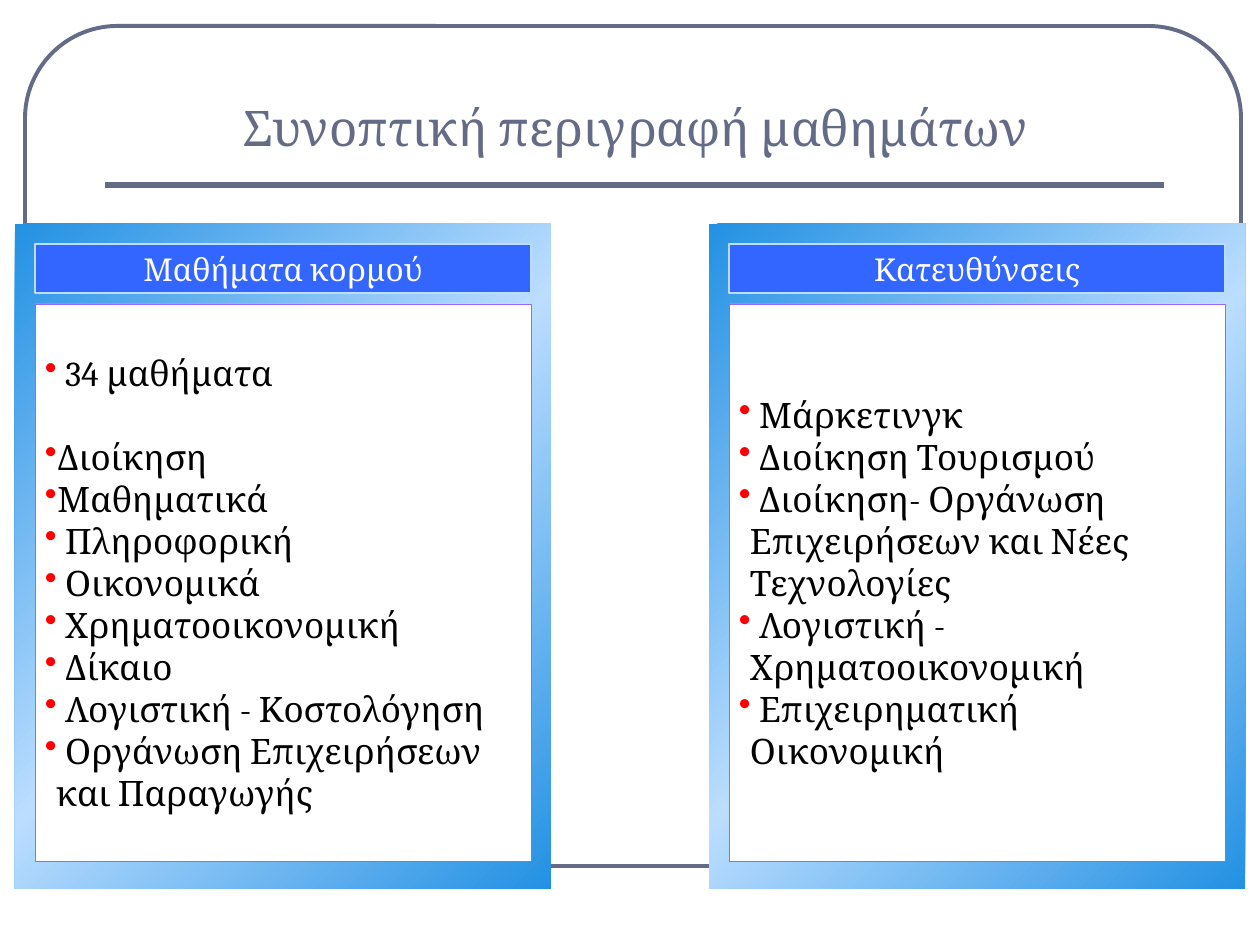
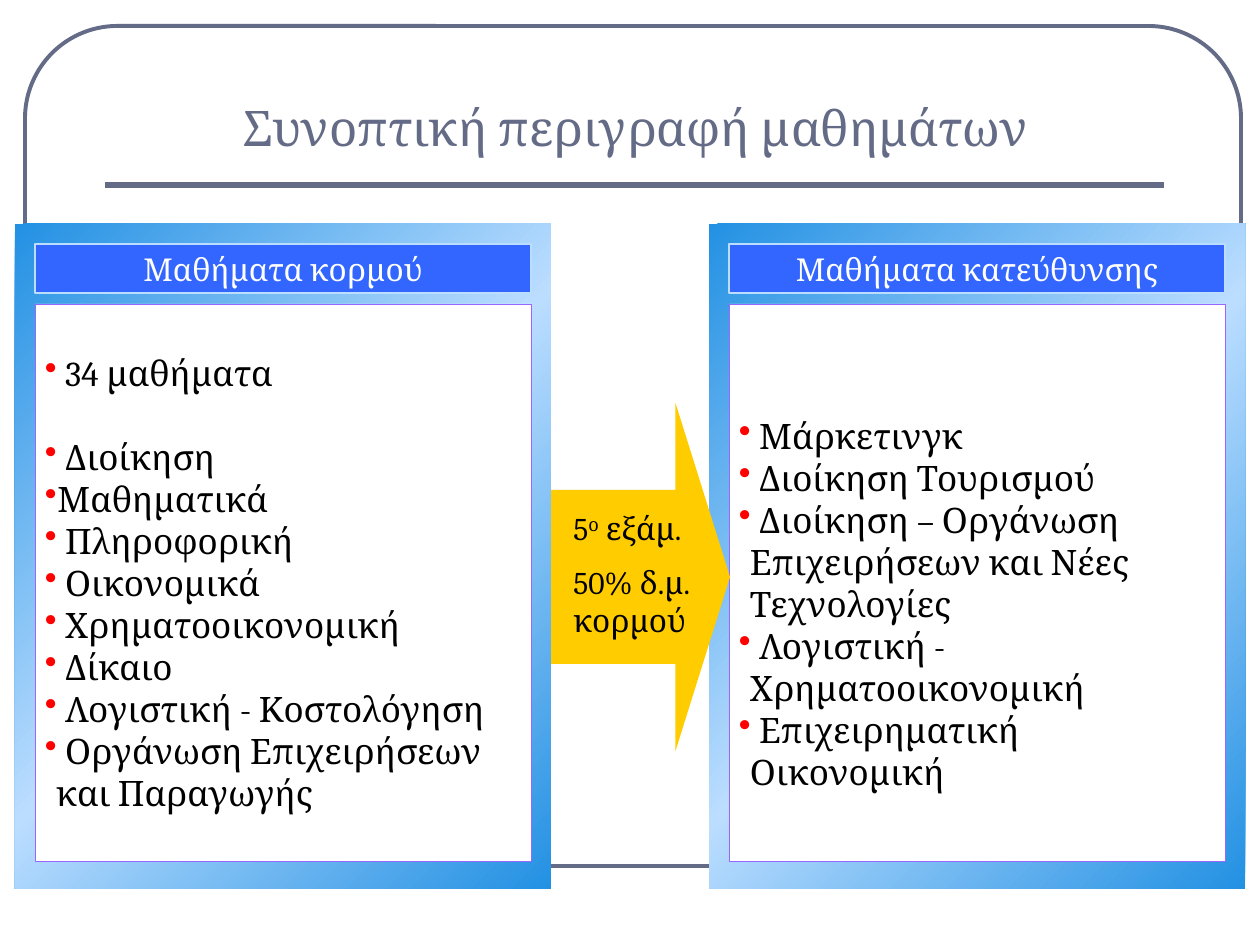
from copy import deepcopy

from pptx import Presentation
from pptx.dml.color import RGBColor
from pptx.enum.shapes import MSO_CONNECTOR as CONN, MSO_SHAPE as SHAPE
from pptx.enum.text import MSO_ANCHOR as ANCHOR, PP_ALIGN as ALIGN
from pptx.oxml.ns import qn
from pptx.util import Emu, Pt
from lxml.etree import SubElement

COLORS = {
    "slate": "646B86", "edge": "2391E3", "pale": "BBDDFF", "header": "3366FF",
    "violet": "9966FF", "bullet": "FF0000", "arrow": "FFCC00",
    "white": "FFFFFF", "black": "000000",
}
FONT = "Cambria"
TITLE = "Συνοπτική περιγραφή μαθημάτων"
LEFT_X, RIGHT_X = 15, 709
LINE = 42
CORE_SUBJECTS = [
    "Μαθηματικά", " Πληροφορική", " Οικονομικά", " Χρηματοοικονομική", " Δίκαιο",
    " Λογιστική - Κοστολόγηση", " Οργάνωση Επιχειρήσεων και Παραγωγής",
]


def px(n):
    return Emu(round(n * 914400 / 126))


def rgb(name):
    return RGBColor.from_string(COLORS[name])


class Deck:
    """Holds the shared style and the current slide, and draws its elements."""

    def __init__(self):
        self.prs = Presentation()
        self.prs.slide_width, self.prs.slide_height = px(1260), px(945)

    def new_slide(self):
        self.slide = self.prs.slides.add_slide(self.prs.slide_layouts[6])
        self.shape(SHAPE.ROUNDED_RECTANGLE, 25, 26, 1216, 840,
                   line="slate", width=2.25, adj=[0.11])
        self.rule(105, 1164, 185)

    def shape(self, kind, x, y, w, h, fill=None, line=None, width=0.75, adj=()):
        s = self.slide.shapes.add_shape(kind, px(x), px(y), px(w), px(h))
        s.shadow.inherit = False
        for i, value in enumerate(adj):
            s.adjustments[i] = value
        if fill:
            s.fill.solid()
            s.fill.fore_color.rgb = rgb(fill)
        else:
            s.fill.background()
        if line:
            s.line.color.rgb = rgb(line)
            s.line.width = Pt(width)
        else:
            s.line.fill.background()
        return s

    def rule(self, x1, x2, y):
        c = self.slide.shapes.add_connector(CONN.STRAIGHT, px(x1), px(y), px(x2), px(y))
        c.line.color.rgb = rgb("slate")
        c.line.width = Pt(3)
        SubElement(c._element.spPr, qn("a:effectLst"))

    def text_box(self, x, y, w, h):
        tf = self.slide.shapes.add_textbox(px(x), px(y), px(w), px(h)).text_frame
        tf.word_wrap = True
        return tf

    def set_text(self, tf, lines, size, color, align=ALIGN.LEFT):
        tf.text = "\n".join(lines)
        for p in tf.paragraphs:
            p.alignment = align
            for r in p.runs:
                self.style(r, size, color)

    def style(self, r, size, color):
        r.font.name = FONT
        r.font.size = Pt(size)
        r.font.color.rgb = rgb(color)

    def title(self, text):
        tf = self.text_box(105, 45, 1061, 118)
        tf.vertical_anchor = ANCHOR.BOTTOM
        self.set_text(tf, [text], 28, "slate", ALIGN.CENTER)

    def gradient(self, s, names):
        s.fill.gradient()
        s.fill.gradient_angle = 315
        stops = s._element.spPr.find(".//" + qn("a:gsLst"))
        stops.append(deepcopy(stops[0]))
        for i, (stop, name) in enumerate(zip(s.fill.gradient_stops, names)):
            stop.color.rgb = rgb(name)
            stop.position = i / (len(names) - 1)

    def bullet(self, p):
        pPr = p._p.get_or_add_pPr()
        pPr.set("marL", str(px(13)))
        pPr.set("indent", str(px(-11)))
        clr = SubElement(pPr, qn("a:buClr"))
        SubElement(clr, qn("a:srgbClr")).set("val", COLORS["bullet"])
        SubElement(pPr, qn("a:buChar")).set("char", "•")

    def panel(self, x, header, items, lead=0, gap_after_first=0):
        frame = self.shape(SHAPE.ACTION_BUTTON_CUSTOM, x, 224, 536, 665)
        self.gradient(frame, ["edge", "pale", "edge"])
        card = self.shape(SHAPE.RECTANGLE, x + 20, 304, 496, 557, "white", "violet", 0.25)
        head = self.shape(SHAPE.RECTANGLE, x + 20, 244, 496, 49, "header", "pale")
        for s in (card, head):
            tf = s.text_frame
            tf.vertical_anchor = ANCHOR.MIDDLE
            tf.margin_left = tf.margin_right = px(8)
            tf.margin_top = tf.margin_bottom = px(6)
        tf.word_wrap = False
        self.set_text(tf, [header], 18, "white", ALIGN.CENTER)
        tf = card.text_frame
        tf.word_wrap = True
        tf.margin_top = px(6 + lead)
        self.set_text(tf, items, 20, "black")
        tf.paragraphs[0].space_after = px(gap_after_first)
        for p in tf.paragraphs:
            self.bullet(p)

    def core_panel(self, management):
        self.panel(LEFT_X, "Μαθήματα κορμού",
                   [" 34 μαθήματα", management, *CORE_SUBJECTS], gap_after_first=LINE)

    def track_panel(self, header, organisation, lead=0):
        self.panel(RIGHT_X, header, [
            " Μάρκετινγκ", " Διοίκηση Τουρισμού",
            f" {organisation} Επιχειρήσεων και Νέες Τεχνολογίες",
            " Λογιστική - Χρηματοοικονομική", " Επιχειρηματική Οικονομική",
        ], lead)

    def arrow(self):
        self.shape(SHAPE.RIGHT_ARROW, 512, 403, 218, 348, "arrow", adj=[0.5, 0.25])

    def arrow_note(self):
        tf = self.text_box(561, 503, 169, 145)
        self.set_text(tf, ["5", "50% δ.μ. κορμού"], 18, "black")
        semester, share = tf.paragraphs
        for text in ("ο", " εξάμ."):
            r = semester.add_run()
            r.text = text
            self.style(r, 18, "black")
        semester.runs[1].font._element.set("baseline", "30000")
        share.space_before = Pt(9)


def main():
    deck = Deck()

    deck.new_slide()
    deck.track_panel("Κατευθύνσεις", "Διοίκηση- Οργάνωση")
    deck.title(TITLE)
    deck.core_panel("Διοίκηση")

    deck.new_slide()
    deck.track_panel("Μαθήματα κατεύθυνσης", "Διοίκηση – Οργάνωση", lead=LINE)
    deck.arrow()
    deck.title(TITLE)
    deck.core_panel(" Διοίκηση")
    deck.arrow_note()

    deck.prs.save("out.pptx")


if __name__ == "__main__":
    main()
